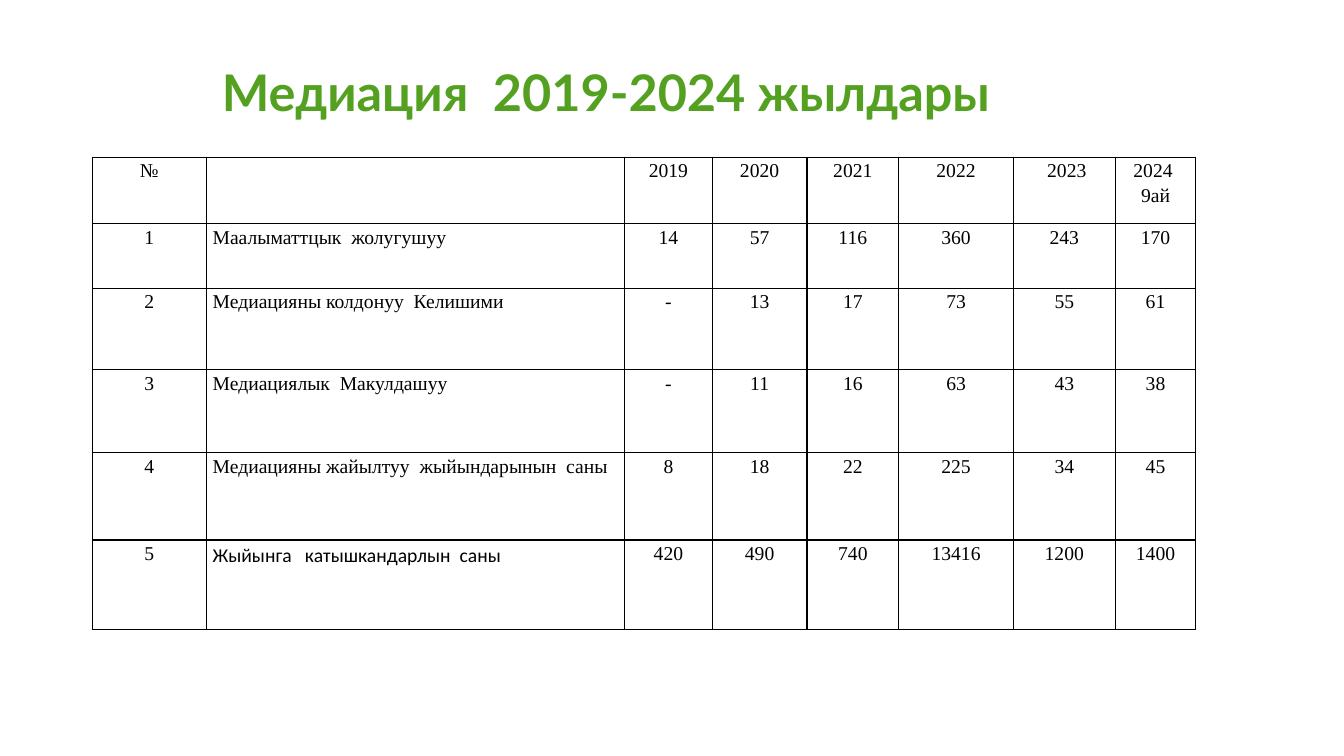
import dataclasses

import lxml.etree
import pptx
import pptx.dml.color
import pptx.enum.text
import pptx.oxml.ns
import pptx.util

Pt = pptx.util.Pt
ALIGN = pptx.enum.text.PP_ALIGN


@dataclasses.dataclass(frozen=True)
class Theme:
    """Colours, fonts and type sizes of the slide."""

    green: str = "54A021"
    black: str = "000000"
    title_font: str = "Lato"
    table_font: str = "Times New Roman"
    accent_font: str = "Calibri"
    title_size: float = 36
    table_size: float = 14
    border: float = 1


THEME = Theme()
TITLE = "Медиация  2019-2024 жылдары"
ROWS = [
    ["№", "", "2019", "2020", "2021", "2022", " 2023", "2024  9ай"],
    ["1", "Маалыматтцык  жолугушуу", "14", "57", "116", "360", "243", "170"],
    ["2", "Медиацияны колдонуу  Келишими", "-", "13", "17", "73", "55", "61"],
    ["3", "Медиациялык  Макулдашуу", "-", "11", "16", "63", "43", "38"],
    ["4", "Медиацияны жайылтуу  жыйындарынын  саны", "8", "18", "22", "225", "34", "45"],
    ["5", "Жыйынга   катышкандарлын  саны", "420", "490", "740", "13416", "1200", "1400"],
]
COLUMN_WIDTHS = [81.4, 298.8, 62.6, 67.7, 65.5, 82, 72.7, 57.6]
ROW_HEIGHTS = [47.5, 46.1, 58.3, 59, 62.6, 64.1]
LABEL_COLUMN = 1


def style_font(font, name, size, color):
    """Set typeface, size and colour of a font."""
    font.name = name
    font.size = Pt(size)
    font.color.rgb = pptx.dml.color.RGBColor.from_string(color)


def add_borders(cell):
    """Draw a solid line on all four sides of a cell."""
    properties = cell._tc.get_or_add_tcPr()
    for index, side in enumerate(("lnL", "lnR", "lnT", "lnB")):
        line = lxml.etree.Element(pptx.oxml.ns.qn(f"a:{side}"), w=str(Pt(THEME.border)))
        fill = lxml.etree.SubElement(line, pptx.oxml.ns.qn("a:solidFill"))
        lxml.etree.SubElement(fill, pptx.oxml.ns.qn("a:srgbClr"), val=THEME.black)
        properties.insert(index, line)


def place_title(slide, left, top, width, height):
    """Fill the title placeholder and fit it to the given box."""
    title = slide.shapes.title
    title.left, title.top, title.width, title.height = map(Pt, (left, top, width, height))
    frame = title.text_frame
    frame.word_wrap = True
    frame.auto_size = pptx.enum.text.MSO_AUTO_SIZE.NONE
    frame.vertical_anchor = pptx.enum.text.MSO_ANCHOR.TOP
    frame.margin_left, frame.margin_right = Pt(20), Pt(7)
    frame.margin_top = frame.margin_bottom = Pt(8)
    frame.text = TITLE
    paragraph = frame.paragraphs[0]
    paragraph.alignment = ALIGN.CENTER
    paragraph.line_spacing = 1.0
    paragraph.font.bold = True
    style_font(paragraph.font, THEME.title_font, THEME.title_size, THEME.green)


def fill_cell(cell, text, alignment, font_name):
    """Write and format one table cell."""
    cell.fill.background()
    add_borders(cell)
    cell.margin_left = cell.margin_right = Pt(4.5)
    cell.margin_top = cell.margin_bottom = Pt(0)
    cell.text = text
    paragraph = cell.text_frame.paragraphs[0]
    paragraph.alignment = alignment
    paragraph.line_spacing = 1.15
    style_font(paragraph.font, font_name, THEME.table_size, THEME.black)


def place_table(slide, left, top):
    """Add the yearly mediation table with its corner at left, top."""
    frame = slide.shapes.add_table(
        len(ROWS), len(COLUMN_WIDTHS), Pt(left), Pt(top),
        Pt(sum(COLUMN_WIDTHS)), Pt(sum(ROW_HEIGHTS)),
    )
    table = frame.table
    table.first_row = table.horz_banding = False
    for column, width in zip(table.columns, COLUMN_WIDTHS):
        column.width = Pt(width)
    for row, height in zip(table.rows, ROW_HEIGHTS):
        row.height = Pt(height)
    for row_index, texts in enumerate(ROWS):
        for column_index, text in enumerate(texts):
            is_label = column_index == LABEL_COLUMN
            is_accent = is_label and row_index == len(ROWS) - 1
            fill_cell(
                table.cell(row_index, column_index),
                text,
                ALIGN.LEFT if is_label else ALIGN.CENTER,
                THEME.accent_font if is_accent else THEME.table_font,
            )


def main():
    """Build and save the presentation."""
    presentation = pptx.Presentation()
    presentation.slide_width, presentation.slide_height = Pt(960), Pt(540)
    slide = presentation.slides.add_slide(presentation.slide_layouts.get_by_name("Title Only"))
    place_title(slide, 62, 36, 728.6, 70.6)
    place_table(slide, 66, 112.3)
    presentation.save("out.pptx")


if __name__ == "__main__":
    main()
